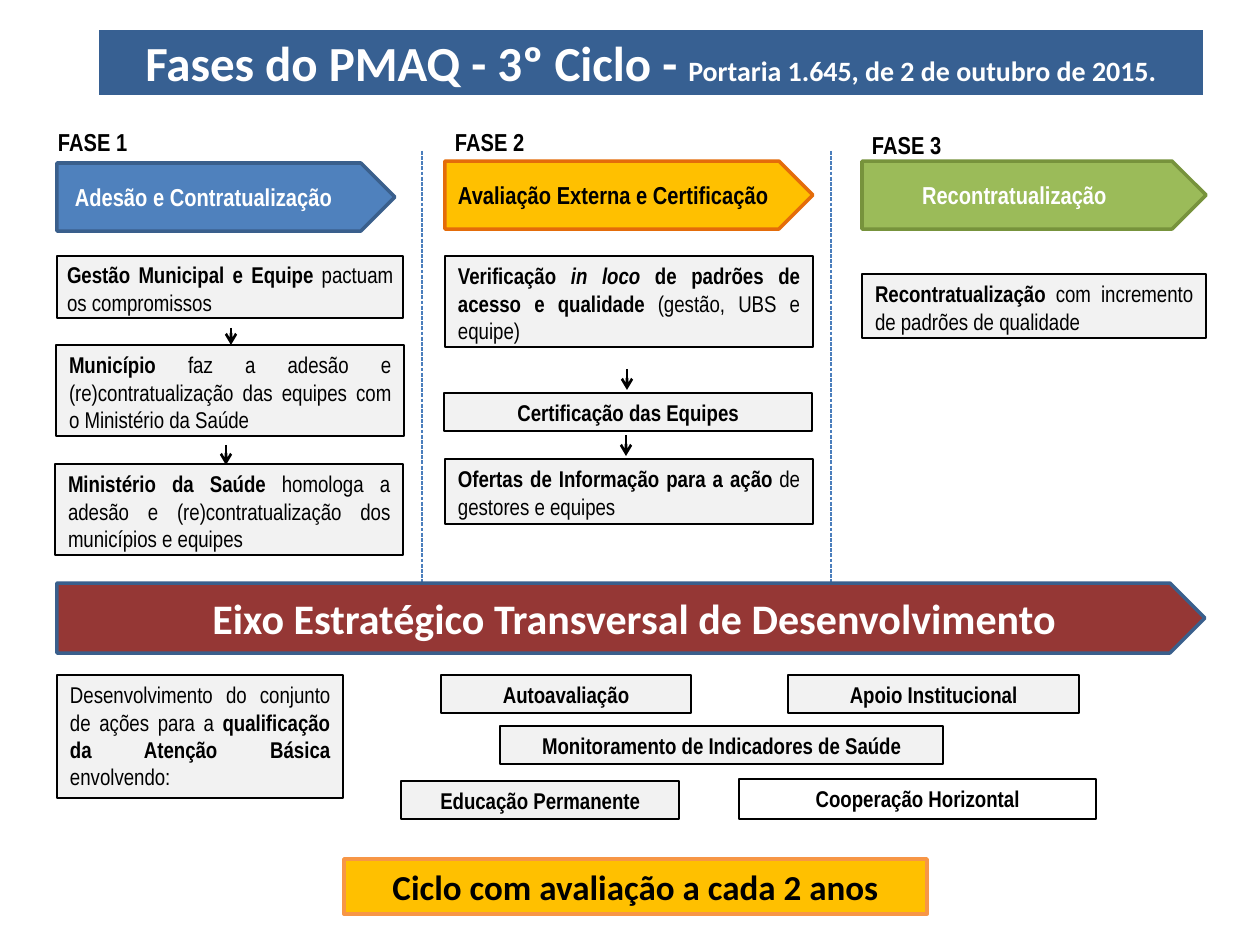
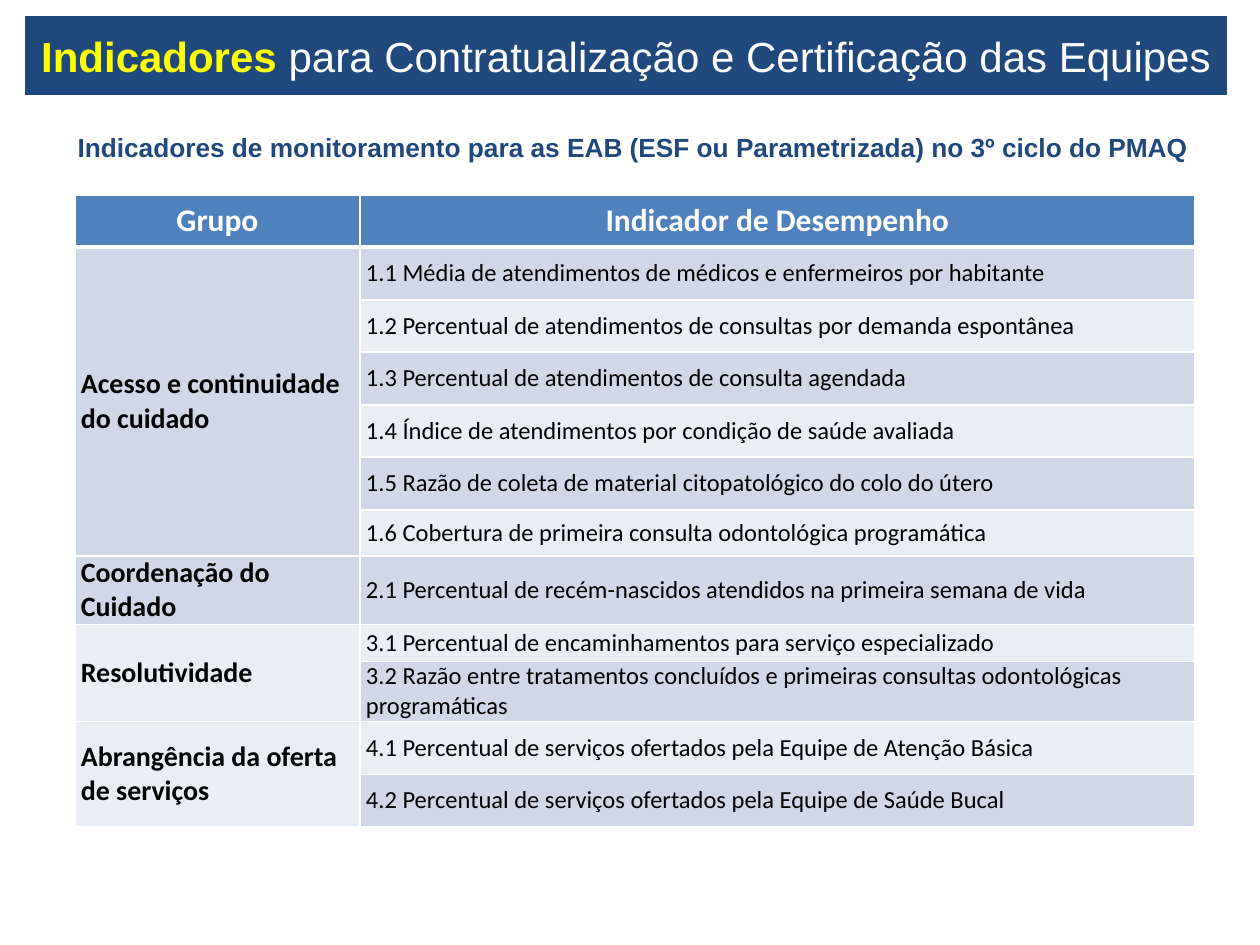
from lxml import etree
from pptx import Presentation
from pptx import util as u
from pptx.dml.color import RGBColor
from pptx.enum import dml, shapes, text
from pptx.oxml.ns import qn

WHITE = RGBColor(0xFF, 0xFF, 0xFF)
BLACK = RGBColor(0, 0, 0)
GREY = RGBColor(0xF2, 0xF2, 0xF2)
BLUE = RGBColor(0x4F, 0x81, 0xBD)
EDGE = RGBColor(0x3A, 0x5F, 0x8C)
STEEL = RGBColor(0x37, 0x60, 0x92)
NAVY = RGBColor(0x1F, 0x49, 0x7D)
DASH = RGBColor(0x4B, 0x7E, 0xBC)
GOLD = RGBColor(0xFF, 0xC0, 0x00)
RUST = RGBColor(0xE4, 0x6C, 0x0A)
PEACH = RGBColor(0xF7, 0x96, 0x46)
GREEN = RGBColor(0x9B, 0xBB, 0x59)
MOSS = RGBColor(0x77, 0x93, 0x3C)
WINE = RGBColor(0x95, 0x37, 0x35)
YELLOW = RGBColor(0xFF, 0xFF, 0x00)
DARK = RGBColor(0xD0, 0xD8, 0xE8)
LIGHT = RGBColor(0xE9, 0xED, 0xF4)

RECT = shapes.MSO_SHAPE.RECTANGLE
PLATE = shapes.MSO_SHAPE.PENTAGON
LEFT, MID, JUST = text.PP_ALIGN.LEFT, text.PP_ALIGN.CENTER, text.PP_ALIGN.JUSTIFY
TOP, HALF = text.MSO_ANCHOR.TOP, text.MSO_ANCHOR.MIDDLE
NARROW = "Arial Narrow"


def px(n):
    return u.Emu(round(n * 914400 / 126))


def style(font, size, face, ink, bold=False):
    font.size, font.name, font.bold = u.Pt(size), face, bold
    font.color.rgb = ink


def write(para, runs, size, face, ink, align):
    """Each run is its wording and its marks: b for bold, i for italic."""
    para.alignment = align
    for words, marks in runs:
        run = para.add_run()
        run.text = words
        style(run.font, size, face, ink, "b" in marks)
        run.font.italic = "i" in marks


def box(slide, area, runs, fill=None, line=None, wt=0.75, kind=RECT, size=13,
        face=NARROW, ink=BLACK, align=MID, anchor=TOP, pad=(13, 6)):
    shape = slide.shapes.add_shape(kind, *map(px, area))
    shape.shadow.inherit = False
    if fill is None:
        shape.fill.background()
    else:
        shape.fill.solid()
        shape.fill.fore_color.rgb = fill
    if line is None:
        shape.line.fill.background()
    else:
        shape.line.color.rgb = line
        shape.line.width = u.Pt(wt)
    frame = shape.text_frame
    frame.word_wrap = True
    frame.vertical_anchor = anchor
    frame.margin_left, frame.margin_right = px(pad[0]), px(min(pad[0], 13))
    frame.margin_top = frame.margin_bottom = px(pad[1])
    write(frame.paragraphs[0], runs, size, face, ink, align)
    return shape


def rule(slide, x, top, end, ink, wt):
    line = slide.shapes.add_connector(
        shapes.MSO_CONNECTOR.STRAIGHT, px(x), px(top), px(x), px(end))
    line.line.color.rgb = ink
    line.line.width = u.Pt(wt)
    etree.SubElement(line.element.spPr, qn("a:effectLst"))
    return line


def arrow(slide, x, top, end):
    line = rule(slide, x, top, end, BLACK, 1.5)
    stroke = line.element.spPr.find(qn("a:ln"))
    etree.SubElement(stroke, qn("a:tailEnd"), type="arrow")


def phase(slide, spot, label, plate, cards, arrows):
    """One column: label, arrow-shaped heading, cards and small arrows."""
    x, y = spot
    name, dx, dy = label
    tag = box(slide, (x + dx, y + dy, 100, 37), [(name, "b")], WHITE, size=14, align=LEFT)
    tag.text_frame.paragraphs[0].line_spacing = 1.15
    words, wide, drop, fill, line, ink, inset = plate
    box(slide, (x, y + drop, wide, 68), [(words, "b")], fill, line, 2, PLATE,
        14, ink=ink, align=LEFT, anchor=HALF, pad=(inset, 6))
    for ax, top, end in arrows:
        arrow(slide, x + ax, y + top, y + end)
    for (cx, cy, w, h), runs, align, pad in cards:
        box(slide, (x + cx, y + cy, w, h), runs, GREY, BLACK, align=align, pad=pad)


def axis(slide, area):
    """Cross-cutting axis: wide heading, intro card and action tags."""
    x, y, wide, high = area
    box(slide, area, [("Eixo Estratégico Transversal de Desenvolvimento", "b")],
        WINE, EDGE, 2, PLATE, 24, "Calibri", WHITE, anchor=HALF, pad=(37, 6))
    box(slide, (x, y + 92, 286, 123), [
        ("Desenvolvimento do conjunto de ações para a ", ""),
        ("qualificação da Atenção Básica ", "b"),
        ("envolvendo:", "")], GREY, BLACK, align=JUST)
    tags = [("Autoavaliação", 384, 92, 250, 38, GREY),
            ("Monitoramento de Indicadores de Saúde", 443, 143, 443, 38, GREY),
            ("Apoio Institucional", 731, 92, 291, 38, GREY),
            ("Educação Permanente", 344, 198, 278, 38, GREY),
            ("Cooperação Horizontal", 682, 196, 357, 40, WHITE)]
    for words, dx, dy, w, h, fill in tags:
        box(slide, (x + dx, y + dy, w, h), [(words, "b")], fill, BLACK)


def phases(slide):
    # Dividers between the columns
    for x in (422, 831):
        line = rule(slide, x, 151, 633, DASH, 0.75)
        line.line.dash_style = dml.MSO_LINE.SQUARE_DOT

    # Columns
    pad = (13, 6)
    phase(slide, (57, 117), ("FASE 1", -12, 0),
          (" Adesão e Contratualização", 338, 46, BLUE, EDGE, WHITE, 13),
          [((0, 139, 346, 62), [("Gestão Municipal e Equipe ", "b"),
                                ("pactuam os compromissos", "")], JUST, (10, 5)),
           ((-1, 228, 348, 91), [
               ("Município ", "b"),
               ("faz a adesão e (re)contratualização das equipes com "
                "o Ministério da Saúde", "")], JUST, pad),
           ((-2, 347, 348, 91), [
               ("Ministério da Saúde ", "b"),
               ("homologa a adesão e (re)contratualização dos "
                "municípios e equipes", "")], JUST, pad)],
          [(174, 211, 228), (169, 328, 348)])
    phase(slide, (445, 117), ("FASE 2", -3, 0),
          ("Avaliação Externa e Certificação", 368, 44, GOLD, RUST, BLACK, 13),
          [((0, 139, 368, 91), [
              ("Verificação ", "b"), ("in loco ", "bi"),
              ("de padrões de acesso e qualidade ", "b"),
              ("(gestão, UBS e equipe)", "")], JUST, pad),
           ((-1, 276, 368, 38), [("Certificação das Equipes", "b")], MID, pad),
           ((0, 342, 368, 65), [("Ofertas de Informação para a ação ", "b"),
                                ("de gestores e equipes", "")], JUST, pad)],
          [(182, 252, 273), (181, 318, 339)])
    phase(slide, (862, 117), ("FASE 3", -3, 3),
          ("Recontratualização", 344, 44, GREEN, MOSS, WHITE, 60),
          [((0, 157, 344, 64), [("Recontratualização ", "b"),
                                ("com incremento de padrões de qualidade", "")],
            JUST, pad)], [])

    # Axis, closing box and title
    axis(slide, (57, 583, 1148, 70))
    box(slide, (344, 859, 583, 55), [("Ciclo com avaliação a cada 2 anos", "b")],
        GOLD, PEACH, 2, size=20, face="Calibri")
    title = box(slide, (96, 27, 1110, 71), [
        ("Fases do PMAQ - 3º Ciclo - ", "b"),
        ("Portaria 1.645, de 2 de outubro de 2015.", "b")],
        STEEL, WHITE, 3, size=28, face="Calibri", ink=WHITE)
    title.text_frame.paragraphs[0].runs[1].font.size = u.Pt(16)


def border(cell, top, low):
    props = cell._tc.get_or_add_tcPr()
    for side, wt in (("L", 1), ("R", 1), ("T", top), ("B", low)):
        line = etree.SubElement(props, qn("a:ln" + side), w=str(int(u.Pt(wt))))
        fill = etree.SubElement(line, qn("a:solidFill"))
        etree.SubElement(fill, qn("a:srgbClr"), val=str(WHITE))


def fill_in(cell, words, size, ink, bold, align):
    cell.text = words
    for para in cell.text_frame.paragraphs:
        para.alignment = align
        for run in para.runs:
            style(run.font, size, "Calibri", ink, bold)


def grid(slide, spot, cols, rows, heads, groups):
    """Table of indicators, with one merged cell for each group."""
    frame = slide.shapes.add_table(len(rows), len(cols), *map(
        px, (*spot, sum(cols), sum(rows))))
    table = frame.table
    for col, wide in zip(table.columns, cols):
        col.width = px(wide)
    for row, high in zip(table.rows, rows):
        row.height = px(high)

    # Cell look
    for r in range(len(rows)):
        for c in range(len(cols)):
            cell = table.cell(r, c)
            border(cell, 3 if r == 1 else 1, 3 if r == 0 else 1)
            cell.fill.solid()
            cell.fill.fore_color.rgb = BLUE if r == 0 else DARK if r % 2 else LIGHT
            cell.vertical_anchor = HALF
            cell.margin_left = cell.margin_right = px(6)
            cell.margin_top = cell.margin_bottom = 0

    # Wording
    for c, words in enumerate(heads):
        fill_in(table.cell(0, c), words, 18, WHITE, True, MID)
    r = 1
    for name, items in groups:
        first = table.cell(r, 0)
        if len(items) > 1:
            first.merge(table.cell(r + len(items) - 1, 0))
        fill_in(first, name, 16, BLACK, True, LEFT)
        for item in items:
            fill_in(table.cell(r, 1), item, 14, BLACK, False, LEFT)
            r += 1


def goals(slide):
    # Title and subtitle
    title = box(slide, (25, 16, 1202, 79), [
        ("Indicadores", "b"),
        (" para Contratualização e Certificação das Equipes", "")],
        NAVY, size=24, face="Arial", ink=WHITE, anchor=HALF)
    title.text_frame.paragraphs[0].runs[0].font.color.rgb = YELLOW
    box(slide, (54, 125, 1158, 44), [
        ("Indicadores de monitoramento para as EAB (ESF ou Parametrizada) "
         "no 3º ciclo do PMAQ", "b")], size=15, face="Arial", ink=NAVY)

    # Table
    groups = [
        ("Acesso e continuidade\ndo cuidado", [
            "1.1 Média de atendimentos de médicos e enfermeiros por habitante",
            "1.2 Percentual de atendimentos de consultas por demanda espontânea",
            "1.3 Percentual de atendimentos de consulta agendada",
            "1.4 Índice de atendimentos por condição de saúde avaliada",
            "1.5 Razão de coleta de material citopatológico do colo do útero",
            "1.6 Cobertura de primeira consulta odontológica programática"]),
        ("Coordenação do Cuidado", [
            "2.1 Percentual de recém-nascidos atendidos na primeira semana de vida"]),
        ("Resolutividade", [
            "3.1 Percentual de encaminhamentos para serviço especializado",
            "3.2 Razão entre tratamentos concluídos e primeiras consultas "
            "odontológicas programáticas"]),
        ("Abrangência da oferta de serviços", [
            "4.1 Percentual de serviços ofertados pela Equipe de Atenção Básica",
            "4.2 Percentual de serviços ofertados pela Equipe de Saúde Bucal"])]
    rows = [52, 53] * 3 + [46, 67, 37, 60, 53, 52]
    grid(slide, (75, 195), (285, 835), rows,
         ("Grupo", "Indicador de Desempenho"), groups)


def main():
    deck = Presentation()
    deck.slide_width, deck.slide_height = px(1260), px(945)
    for build in (phases, goals):
        build(deck.slides.add_slide(deck.slide_layouts[6]))
    deck.save("out.pptx")


if __name__ == "__main__":
    main()
